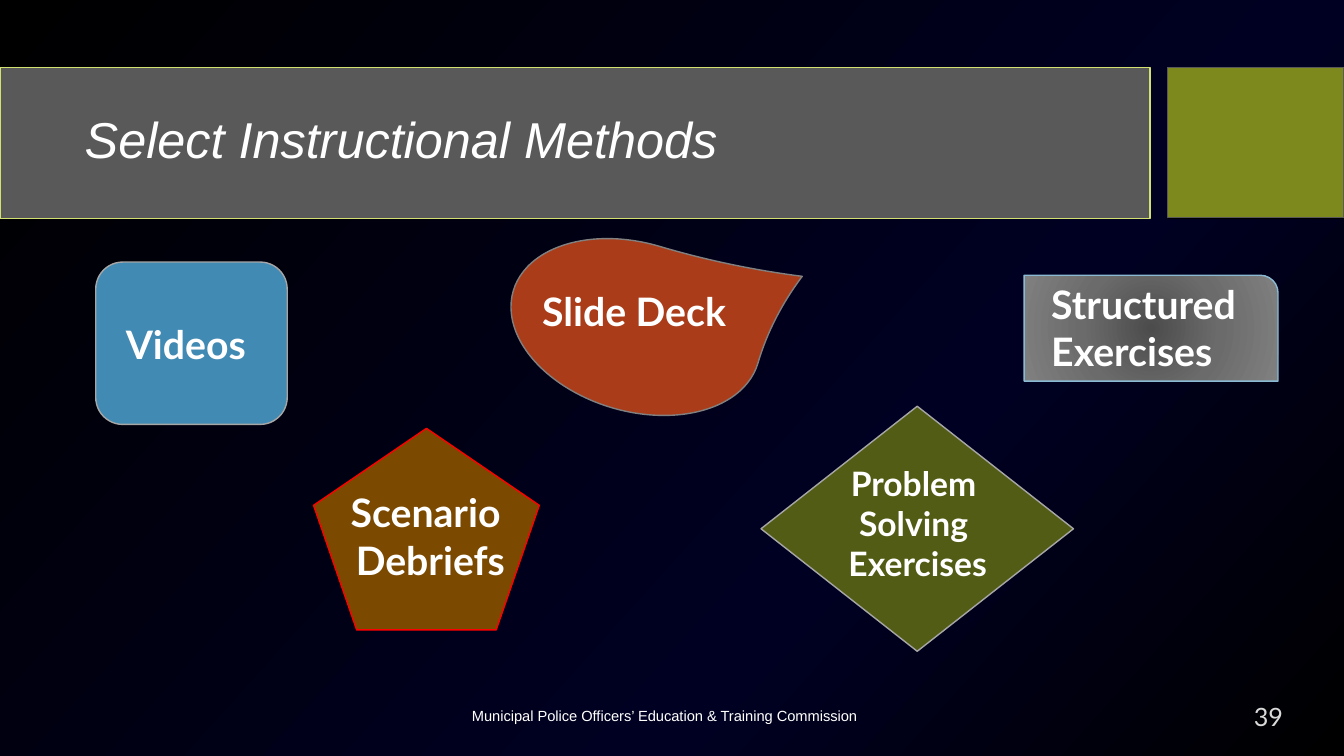
from lxml import etree
from pptx import Presentation
from pptx.dml.color import RGBColor
from pptx.enum import shapes as kinds, text as tx
from pptx.oxml import ns
from pptx.util import Pt

WHITE = RGBColor(0xFF, 0xFF, 0xFF)
BLACK = RGBColor(0x00, 0x00, 0x00)
NIGHT = RGBColor(0x00, 0x00, 0x22)
PALE = RGBColor(0xD9, 0xD9, 0xD9)
SLATE = RGBColor(0x59, 0x59, 0x59)
LIME = RGBColor(0xD3, 0xE1, 0x71)
OLIVE = RGBColor(0x7D, 0x89, 0x1D)
SILVER = RGBColor(0xA6, 0xA6, 0xA6)
GREY = RGBColor(0x80, 0x80, 0x80)
MID_GREY = RGBColor(0x6B, 0x6B, 0x6B)
DARK_GREY = RGBColor(0x4C, 0x4C, 0x4C)
BLUE = RGBColor(0x41, 0x8A, 0xB3)
SKY = RGBColor(0x8A, 0xBA, 0xD4)
MOSS = RGBColor(0x53, 0x5C, 0x14)
BROWN = RGBColor(0x7B, 0x49, 0x00)
RED = RGBColor(0xFF, 0x00, 0x00)
RUST = RGBColor(0xAB, 0x3C, 0x19)

SHAPE = kinds.MSO_SHAPE
LEFT, CENTER = tx.PP_ALIGN.LEFT, tx.PP_ALIGN.CENTER


def set_gradient(fill, stops, direction):
    """Give fill the (percent, colour) stops; direction is the a:lin or a:path XML."""
    fill.gradient()
    grad = fill._xPr.find(ns.qn("a:gradFill"))
    for child in list(grad):
        grad.remove(child)
    stop_list = etree.SubElement(grad, ns.qn("a:gsLst"))
    for percent, color in stops:
        stop = etree.SubElement(stop_list, ns.qn("a:gs"), pos=str(percent * 1000))
        etree.SubElement(stop, ns.qn("a:srgbClr"), val=str(color))
    grad.append(etree.fromstring(direction))


def add_outlined(shapes, kind, box, fill, line):
    shape = shapes.add_shape(kind, *map(Pt, box))
    shape.shadow.inherit = False
    if fill is None:
        shape.fill.background()
    else:
        shape.fill.solid()
        shape.fill.fore_color.rgb = fill
    shape.line.color.rgb = line
    shape.line.width = Pt(1)
    return shape


prs = Presentation()
prs.slide_width, prs.slide_height = Pt(960), Pt(540)
slide = prs.slides.add_slide(prs.slide_layouts[5])
set_gradient(slide.background.fill, [(0, BLACK), (66, NIGHT), (100, BLACK)],
             f'<a:lin {ns.nsdecls("a")} ang="2520000" scaled="0"/>')

# Title band
for box, fill, line in [
    ((0, 48.24, 821.5, 108), SLATE, LIME),
    ((833.76, 48.24, 126.24, 108), OLIVE, BLACK),
    ((833.76, 48.24, 126.24, 107.3), None, SLATE),
]:
    add_outlined(slide.shapes, SHAPE.RECTANGLE, box, fill, line)

title = slide.shapes.title
title.element.getparent().append(title.element)
title.left, title.top, title.width, title.height = map(Pt, (53.28, 59, 756.7, 85))
title.text_frame.text = "Select Instructional Methods"
title.text_frame.vertical_anchor = tx.MSO_ANCHOR.MIDDLE
heading = title.text_frame.paragraphs[0]
heading.alignment = LEFT
heading.line_spacing = 0.9
heading.font.name, heading.font.size = "Arial", Pt(36)
heading.font.italic = True
heading.font.color.rgb = WHITE

# Footer
for words, box, font, size, color, align, anchor in [
    ("Municipal Police Officers’ Education & Training Commission",
     (254.9, 496.8, 440, 28.8), "Arial", 10.5, WHITE, CENTER, tx.MSO_ANCHOR.MIDDLE),
    ("39", (888.5, 497.5, 47.5, 21.6), "Lato", 18, PALE, LEFT, tx.MSO_ANCHOR.TOP),
]:
    frame = slide.shapes.add_textbox(*map(Pt, box)).text_frame
    frame.word_wrap = True
    frame.vertical_anchor = anchor
    frame.text = words
    line = frame.paragraphs[0]
    line.alignment = align
    line.font.name, line.font.size = font, Pt(size)
    line.font.color.rgb = color

# Instructional methods: kind, outline box, fill, line, label, label box, size, alignment
METHODS = [
    (SHAPE.ROUNDED_RECTANGLE, (68.4, 187.2, 136.8, 116), BLUE, SILVER,
     "Videos", (82.8, 225.4, 112.3, 41), 28, LEFT),
    (SHAPE.DIAMOND, (543.6, 290.2, 223.2, 175), MOSS, SILVER,
     "Problem \nSolving \nExercises", (595.4, 326.9, 120.2, 94.3), 24, CENTER),
    (SHAPE.REGULAR_PENTAGON, (224, 306, 161.3, 144), BROWN, RED,
     "Scenario \nDebriefs", (239, 345.6, 136.8, 74.9), 28, CENTER),
    (SHAPE.TEAR, (362.9, 173.5, 182.2, 120.2), RUST, GREY,
     "Slide Deck", (380.2, 201.6, 164.2, 41), 28, LEFT),
    (SHAPE.ROUND_1_RECTANGLE, (731.5, 196.6, 181.4, 75.6), GREY, SKY,
     "Structured\nExercises", (743.8, 196.6, 164.9, 74.9), 28, LEFT),
]
for kind, box, fill, line, label, label_box, size, align in METHODS:
    method = slide.shapes.add_group_shape().shapes
    outline = add_outlined(method, kind, box, fill, line)
    if kind == SHAPE.TEAR:
        outline.adjustments[0] = 1.14
        outline.rotation = 16.5
    elif kind == SHAPE.ROUND_1_RECTANGLE:
        set_gradient(outline.fill, [(0, DARK_GREY), (50, MID_GREY), (100, GREY)],
                     f'<a:path {ns.nsdecls("a")} path="circle">'
                     '<a:fillToRect l="50000" t="50000" r="50000" b="50000"/></a:path>')
    frame = method.add_textbox(*map(Pt, label_box)).text_frame
    frame.word_wrap = label == "Videos"
    frame.auto_size = tx.MSO_AUTO_SIZE.SHAPE_TO_FIT_TEXT
    frame.text = label
    for row in frame.paragraphs:
        row.alignment = align
        row.font.name, row.font.size = "Lato", Pt(size)
        row.font.bold = True
        row.font.color.rgb = WHITE

prs.save("out.pptx")
